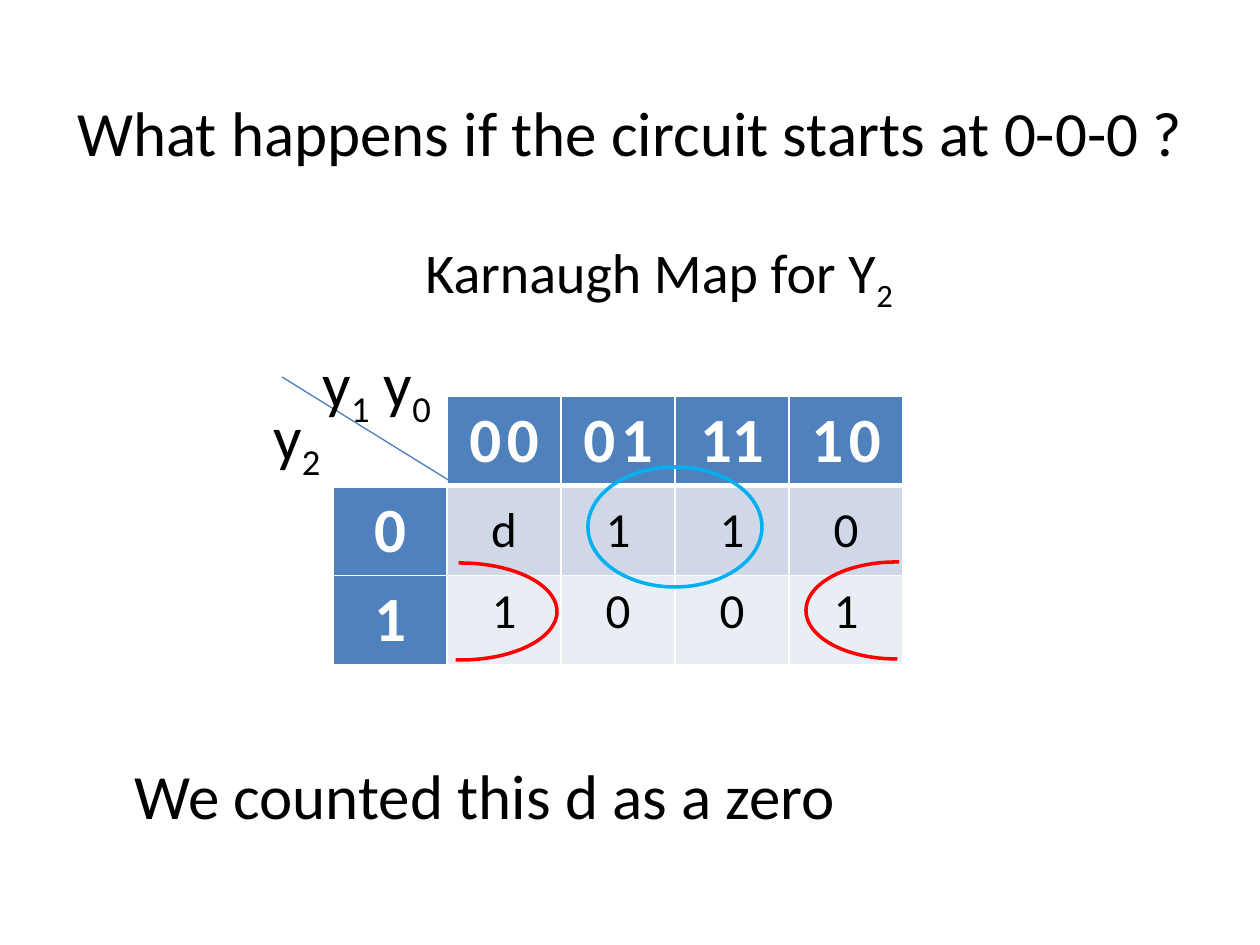
import pptx
import pptx.util
import pptx.dml.color
import pptx.enum.shapes
import pptx.enum.text
import pptx.oxml
import pptx.oxml.ns

RGBColor = pptx.dml.color.RGBColor
SHAPE = pptx.enum.shapes.MSO_SHAPE
ALIGN = pptx.enum.text.PP_ALIGN
ANCHOR = pptx.enum.text.MSO_ANCHOR

BLACK = RGBColor(0x00, 0x00, 0x00)
WHITE = RGBColor(0xFF, 0xFF, 0xFF)
HEADER_BLUE = RGBColor(0x4F, 0x81, 0xBD)
BAND_DARK = RGBColor(0xD0, 0xD8, 0xE8)
BAND_LIGHT = RGBColor(0xE9, 0xED, 0xF4)
DIAGONAL_BLUE = RGBColor(0x4B, 0x7E, 0xBC)
LOOP_BLUE = RGBColor(0x00, 0xB0, 0xF0)
LOOP_RED = RGBColor(0xFF, 0x00, 0x00)

FONT = "Calibri"
PX_PER_INCH = 126
MAP_ROWS = [
    ["", "0 0", "0 1", "11", "1 0"],
    ["0", "d", "1", "1", "0"],
    ["1", "1", "0", "0", "1"],
]


def px(length):
    return pptx.util.Emu(round(length * 914400 / PX_PER_INCH))


def px_box(*lengths):
    return [px(length) for length in lengths]


def write(paragraph, text, size=36, color=BLACK, bold=False, subscript=False):
    run = paragraph.add_run()
    run.text = text
    run.font.name = FONT
    run.font.size = pptx.util.Pt(size)
    run.font.bold = bold
    run.font.color.rgb = color
    if subscript:
        run._r.get_or_add_rPr().set("baseline", "-25000")


def add_label(slide, box, pieces, size=36, indent=0):
    frame = slide.shapes.add_textbox(*px_box(*box)).text_frame
    frame.word_wrap = True
    frame.margin_left += px(indent)
    for index, piece in enumerate(pieces):
        write(frame.paragraphs[0], piece, size=size, subscript=index % 2 == 1)


def add_title(slide, box, text):
    title = slide.shapes.title
    title.left, title.top, title.width, title.height = px_box(*box)
    frame = title.text_frame
    frame.auto_size = pptx.enum.text.MSO_AUTO_SIZE.NONE
    frame.vertical_anchor = ANCHOR.MIDDLE
    frame.paragraphs[0].alignment = ALIGN.CENTER
    write(frame.paragraphs[0], text)


def set_borders(cell, top, bottom):
    properties = cell._tc.get_or_add_tcPr()
    for side, points in (("L", 1), ("R", 1), ("T", top), ("B", bottom)):
        properties.append(pptx.oxml.parse_xml(
            f'<a:ln{side} {pptx.oxml.ns.nsdecls("a")} w="{points * 12700}">'
            f'<a:solidFill><a:srgbClr val="{WHITE}"/></a:solidFill></a:ln{side}>'))


def format_cell(cell, text, row, column):
    is_header = row == 0 or column == 0
    set_borders(cell, top=3 if row == 1 else 1, bottom=3 if row == 0 else 1)
    cell.fill.solid()
    if not text:
        cell.fill.fore_color.rgb = WHITE
        return
    band = BAND_DARK if row == 1 else BAND_LIGHT
    cell.fill.fore_color.rgb = HEADER_BLUE if is_header else band
    cell.vertical_anchor = ANCHOR.MIDDLE if is_header or row == 1 else ANCHOR.TOP
    paragraph = cell.text_frame.paragraphs[0]
    paragraph.alignment = ALIGN.CENTER
    color = WHITE if is_header else BLACK
    for index, digit in enumerate(text.split(" ")):
        if index:
            write(paragraph, " ", size=14, color=color, bold=is_header)
        write(paragraph, digit, size=36 if is_header else 28, color=color, bold=is_header)


def add_loop(slide, kind, box, color, angles=(), mirrored=False):
    shape = slide.shapes.add_shape(kind, *px_box(*box))
    shape.shadow.inherit = False
    shape.fill.background()
    shape.line.color.rgb = color
    shape.line.width = pptx.util.Pt(2)
    for index, degrees in enumerate(angles):
        shape.adjustments[index] = degrees * 0.6
    if mirrored:
        shape._element.spPr.find(pptx.oxml.ns.qn("a:xfrm")).set("flipH", "1")


def add_diagonal(slide, start, end):
    line = slide.shapes.add_connector(
        pptx.enum.shapes.MSO_CONNECTOR.STRAIGHT, *px_box(*start, *end))
    line.line.color.rgb = DIAGONAL_BLUE
    line.line.width = pptx.util.Pt(0.75)
    line._element.spPr.append(
        pptx.oxml.parse_xml(f'<a:effectLst {pptx.oxml.ns.nsdecls("a")}/>'))


def add_karnaugh_map(slide, left, top, column_width, row_height):
    column_count = len(MAP_ROWS[0])
    table = slide.shapes.add_table(
        len(MAP_ROWS), column_count,
        *px_box(left, top, column_width * column_count, row_height * len(MAP_ROWS))).table
    for column in table.columns:
        column.width = px(column_width)
    for row, texts in enumerate(MAP_ROWS):
        table.rows[row].height = px(row_height)
        for column, text in enumerate(texts):
            format_cell(table.cell(row, column), text, row, column)

    add_diagonal(slide, (left + 117, top + 85), (left - 51, top - 19))
    add_label(slide, (left - 51, top - 58, 174, 89), ["y", "1", " y", "0"], indent=28)
    add_label(slide, (left - 72, top - 5, 150, 89), ["y", "2"])
    add_loop(slide, SHAPE.OVAL, (left + 255, top + 71, 174, 120), LOOP_BLUE)
    add_loop(slide, SHAPE.ARC, (left + 31, top + 167, 193, 97), LOOP_RED, (267.9, 95.6))
    add_loop(slide, SHAPE.ARC, (left + 473, top + 166, 180, 97), LOOP_RED,
             (266.4, 91.8), mirrored=True)


def main():
    presentation = pptx.Presentation()
    presentation.slide_width = px(1260)
    presentation.slide_height = px(945)
    slide = presentation.slides.add_slide(presentation.slide_layouts[5])
    add_title(slide, (63, 67, 1134, 129), "What happens if the circuit starts at 0-0-0 ?")
    add_karnaugh_map(slide, left=333, top=396, column_width=114, row_height=82)
    add_label(slide, (413, 231, 563, 81), ["Karnaugh Map for Y", "2"], size=32)
    add_label(slide, (122, 750, 782, 89), ["We counted this d as a zero"])
    presentation.save("out.pptx")


if __name__ == "__main__":
    main()
